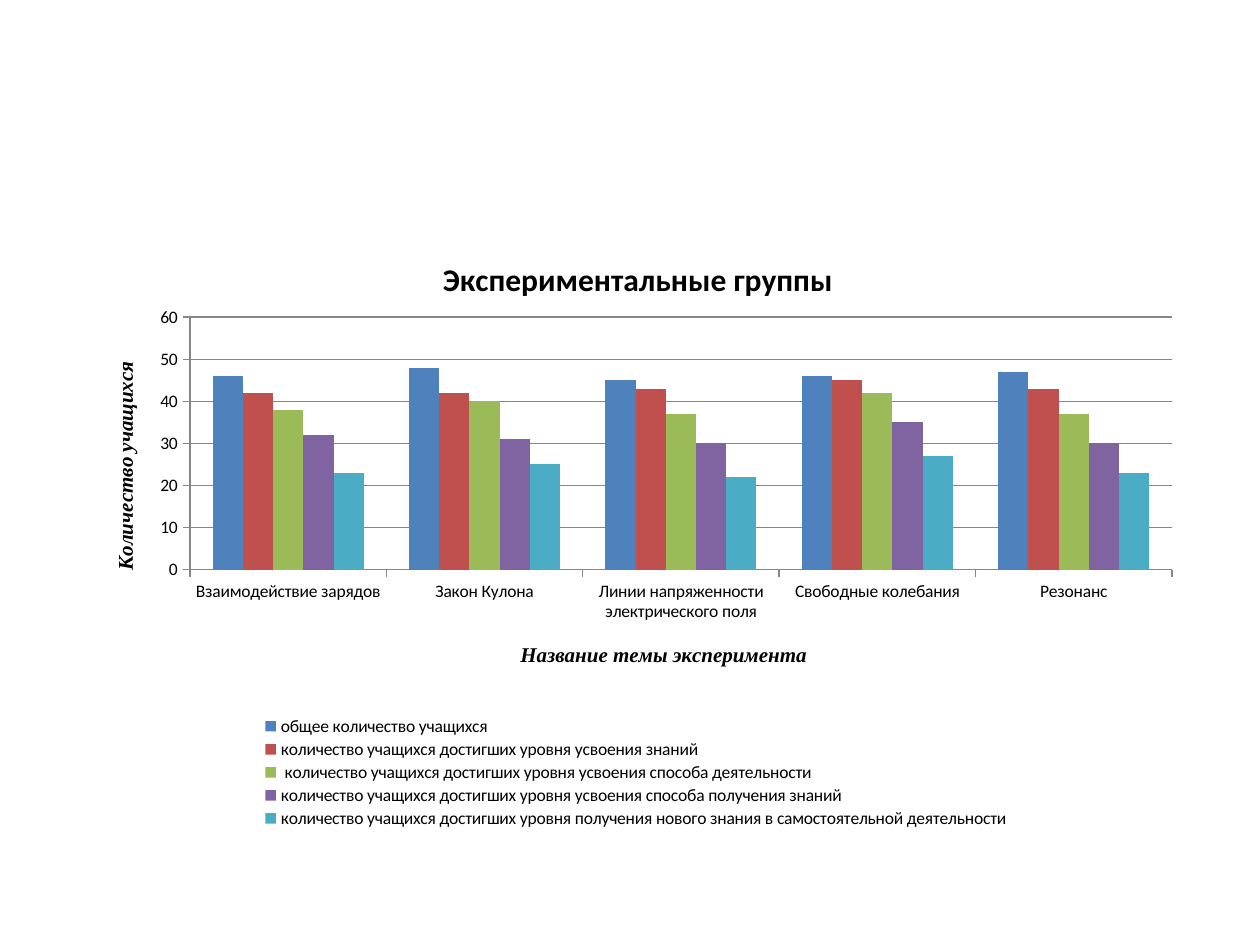
"""Build a slide with a clustered column chart of the experimental groups."""
from dataclasses import dataclass

from lxml.etree import SubElement
from pptx import Presentation
from pptx.chart.data import CategoryChartData
from pptx.dml.color import RGBColor
from pptx.enum.chart import XL_CHART_TYPE as ChartType
from pptx.enum.chart import XL_LEGEND_POSITION as LegendPos
from pptx.enum.chart import XL_TICK_MARK as Tick
from pptx.oxml.ns import qn
from pptx.util import Inches, Pt

COLORS = {
    "text": "000000",
    "line": "868686",
    "blue": "4F81BD",
    "red": "C0504D",
    "green": "9BBB59",
    "purple": "8064A2",
    "aqua": "4BACC6",
}
TOPICS = [
    "Взаимодействие зарядов",
    "Закон Кулона",
    "Линии напряженности электрического поля",
    "Свободные колебания",
    "Резонанс",
]


@dataclass
class Level:
    name: str
    values: tuple[int, ...]
    color: str


@dataclass
class Caption:
    text: str
    font: str
    size: int
    italic: bool
    x: float
    y: float


LEVELS = [
    Level("общее количество учащихся", (46, 48, 45, 46, 47), "blue"),
    Level("количество учащихся достигших уровня усвоения знаний",
          (42, 42, 43, 45, 43), "red"),
    Level(" количество учащихся достигших уровня усвоения способа деятельности",
          (38, 40, 37, 42, 37), "green"),
    Level("количество учащихся достигших уровня усвоения способа получения знаний",
          (32, 31, 30, 35, 30), "purple"),
    Level("количество учащихся достигших уровня получения нового знания "
          "в самостоятельной деятельности", (23, 25, 22, 27, 23), "aqua"),
]
HEADING = Caption("Экспериментальные группы", "Calibri", 18, False, 0.33, 0.05)
TOPIC_AXIS = Caption("Название темы эксперимента", "Times New Roman", 12, True, 0.4, 0.67)
COUNT_AXIS = Caption("Количество учащихся", "Times New Roman", 12, True, 0.04, 0.22)


def rgb(name: str) -> RGBColor:
    """Return a palette colour."""
    return RGBColor.from_string(COLORS[name])


def place(element, x: float, y: float, w: float = 0, h: float = 0, inner: bool = False) -> None:
    """Lay out a chart part by shares of the chart's size."""
    for old in element.findall(qn("c:layout")):
        element.remove(old)
    layout = SubElement(element, qn("c:layout"))
    before = {"plotArea": None, "legend": "c:legendPos", "title": "c:tx"}
    anchor = before[element.tag.split("}")[1]]
    if anchor:
        element.find(qn(anchor)).addnext(layout)
    else:
        element.insert(0, layout)
    manual = SubElement(layout, qn("c:manualLayout"))
    parts = [("layoutTarget", "inner")] if inner else []
    parts += [("xMode", "edge"), ("yMode", "edge"), ("x", x), ("y", y)]
    parts += [("w", w), ("h", h)] if w else []
    for tag, value in parts:
        SubElement(manual, qn(f"c:{tag}")).set("val", str(value))


def write_caption(owner, title, caption: Caption) -> None:
    """Write and place the title of a chart or an axis."""
    tf = title.text_frame
    tf.text = caption.text
    font = tf.paragraphs[0].runs[0].font
    font.name, font.size = caption.font, Pt(caption.size)
    font.bold, font.italic = True, caption.italic
    font.color.rgb = rgb("text")
    place(owner.find(qn("c:title")), caption.x, caption.y)


def style_axis(axis, caption: Caption) -> None:
    """Give an axis its ticks, line and title."""
    axis.major_tick_mark, axis.minor_tick_mark = Tick.OUTSIDE, Tick.NONE
    axis.format.line.color.rgb = rgb("line")
    axis.format.line.width = Pt(0.75)
    title = axis.axis_title
    write_caption(title.text_frame and title._element.getparent(), title, caption)


def add_groups_chart(prs, slide) -> None:
    """Add the column chart of pupils by topic and level."""
    data = CategoryChartData()
    data.categories = TOPICS
    for level in LEVELS:
        data.add_series(level.name, level.values)
    w, h = prs.slide_width, prs.slide_height
    chart = slide.shapes.add_chart(
        ChartType.COLUMN_CLUSTERED, int(w * 0.05), Inches(1.75),
        int(w * 0.9), int(h * 0.66), data).chart
    chart.font.name, chart.font.size = "Calibri", Pt(10)
    chart.font.color.rgb = rgb("text")

    plot = chart.plots[0]
    plot.gap_width, plot.overlap = 150, 0
    plot.vary_by_categories = False
    for series, level in zip(plot.series, LEVELS):
        series.format.fill.solid()
        series.format.fill.fore_color.rgb = rgb(level.color)

    style_axis(chart.category_axis, TOPIC_AXIS)
    axis = chart.value_axis
    style_axis(axis, COUNT_AXIS)
    axis.minimum_scale, axis.maximum_scale, axis.major_unit = 0, 60, 10
    axis.major_gridlines.format.line.color.rgb = rgb("line")
    axis.major_gridlines.format.line.width = Pt(0.75)
    body = axis.axis_title.text_frame._txBody.find(qn("a:bodyPr"))
    body.set("rot", "-5400000")
    body.set("vert", "horz")

    chart.has_title = True
    root = chart._chartSpace.find(qn("c:chart"))
    write_caption(root, chart.chart_title, HEADING)
    chart.has_legend = True
    chart.legend.position = LegendPos.BOTTOM
    chart.legend.include_in_layout = False
    place(root.find(qn("c:legend")), 0.17, 0.79, 0.67, 0.19)
    place(root.find(qn("c:plotArea")), 0.112, 0.155, 0.866, 0.405, inner=True)


def main() -> None:
    """Build and save the presentation."""
    prs = Presentation()
    prs.slide_width, prs.slide_height = Inches(10), Inches(7.5)
    add_groups_chart(prs, prs.slides.add_slide(prs.slide_layouts[6]))
    prs.save("out.pptx")


if __name__ == "__main__":
    main()
